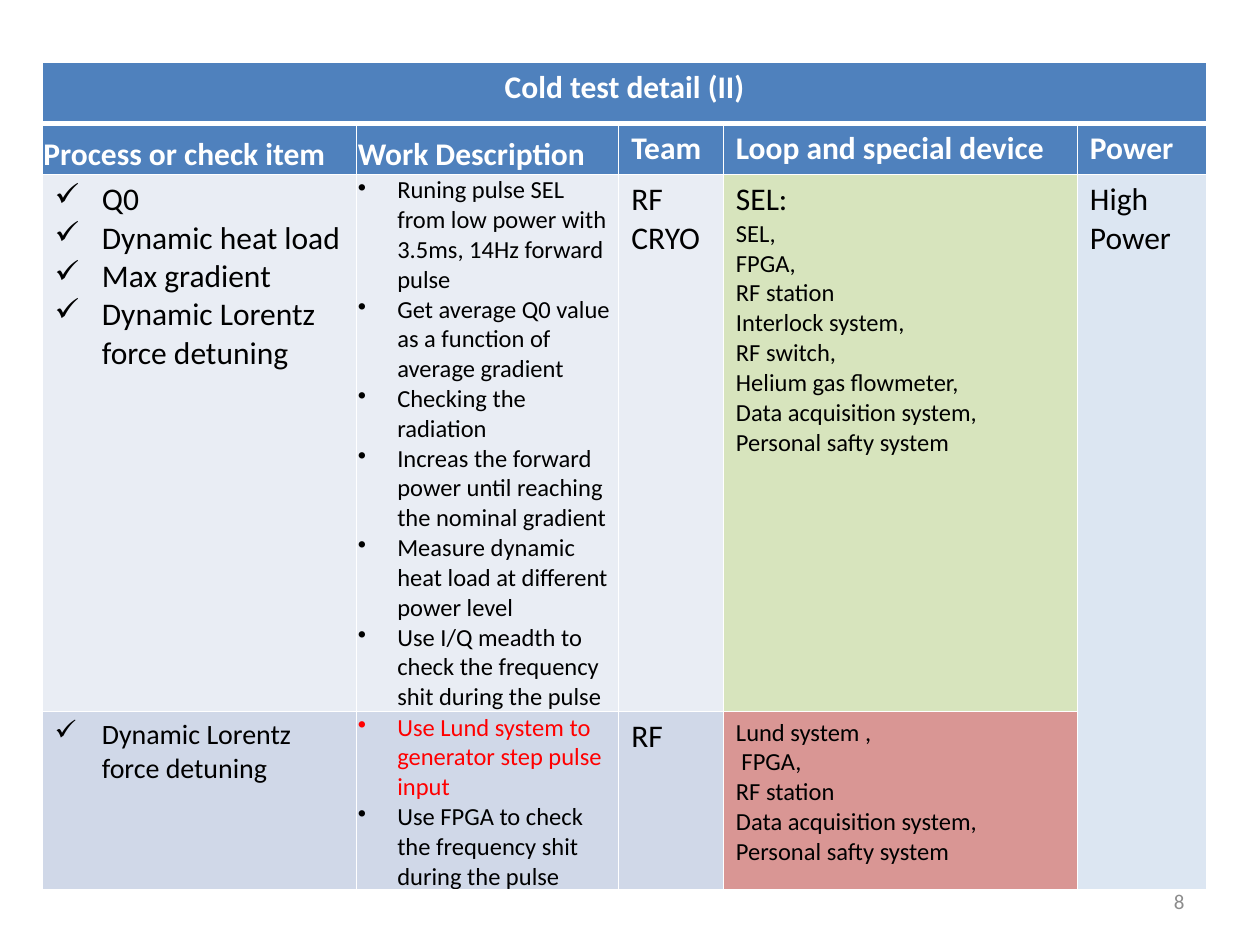
from dataclasses import dataclass

from lxml import etree
from pptx import Presentation
from pptx.dml.color import RGBColor
from pptx.enum import text
from pptx.oxml import ns
from pptx.util import Pt


@dataclass(frozen=True)
class Theme:
    font: str = "Calibri"
    large: int = 18
    medium: int = 16
    small: int = 14
    footer: int = 12
    white: str = "FFFFFF"
    black: str = "000000"
    alert: str = "FF0000"
    muted: str = "8C8C8C"
    header: str = "4F81BD"
    first_band: str = "E9EDF4"
    second_band: str = "D0D8E8"
    green: str = "D7E4BD"
    rose: str = "D99694"
    power: str = "DCE6F2"
    thin_rule: float = 1
    thick_rule: float = 3


THEME = Theme()
CHECK, DOT = ("✓", 27), ("•", 22.5)
COLUMNS = (179.8, 149.8, 59.8, 202.3, 74.2)
ROWS = (35.3, 29, 307, 102)
HEADINGS = ("Process or check item", "Work Description", "Team",
            "Loop and special device", "Power")
MEASUREMENTS = ("Q0", "Dynamic heat load", "Max gradient",
                "Dynamic Lorentz force detuning")
PULSE_STEPS = (
    "Runing pulse SEL from low power with 3.5ms, 14Hz forward pulse",
    "Get average Q0 value as a function of average gradient",
    "Checking the radiation",
    "Increas the forward power until reaching the nominal gradient",
    "Measure dynamic heat load at different power level",
    "Use I/Q meadth to check the frequency shit during the pulse",
)
SEL_DEVICES = ("SEL,", "FPGA,", "RF station", "Interlock system,", "RF switch,",
               "Helium gas flowmeter,", "Data acquisition system,",
               "Personal safty system")
LUND_STEP = "Use Lund system to generator step pulse input"
FPGA_STEP = "Use FPGA to check the frequency shit during the pulse"
LUND_DEVICES = ("Lund system ,", " FPGA,", "RF station",
                "Data acquisition system,", "Personal safty system")


def rgb(color):
    return RGBColor.from_string(color)


def lines(words, size=THEME.large, color=THEME.black, bold=False, bullet=None):
    return [(word, size, color, bold, bullet) for word in words]


def add_bullet(paragraph, bullet):
    mark, indent = bullet
    properties = paragraph._p.get_or_add_pPr()
    properties.set("marL", str(Pt(indent)))
    properties.set("indent", str(-Pt(indent)))
    etree.SubElement(properties, ns.qn("a:buChar")).set("char", mark)


def write(frame, content, align=text.PP_ALIGN.LEFT):
    for index, (word, size, color, bold, bullet) in enumerate(content):
        paragraph = frame.add_paragraph() if index else frame.paragraphs[0]
        paragraph.alignment = align
        if bullet:
            add_bullet(paragraph, bullet)
        run = paragraph.add_run()
        run.text = word
        run.font.name = THEME.font
        run.font.size = Pt(size)
        run.font.bold = bold
        run.font.color.rgb = rgb(color)


def style_cell(cell, fill, bottom_rule, top_rule):
    cell.fill.solid()
    cell.fill.fore_color.rgb = rgb(fill)
    properties = cell._tc.get_or_add_tcPr()
    rules = (("L", THEME.thin_rule), ("R", THEME.thin_rule),
             ("T", top_rule), ("B", bottom_rule))
    for position, (side, width) in enumerate(rules):
        border = etree.Element(ns.qn(f"a:ln{side}"), w=str(Pt(width)))
        paint = etree.SubElement(border, ns.qn("a:solidFill"))
        etree.SubElement(paint, ns.qn("a:srgbClr")).set("val", THEME.white)
        properties.insert(position, border)


def tighten(cell):
    cell.vertical_anchor = text.MSO_ANCHOR.BOTTOM
    cell.margin_left = cell.margin_right = cell.margin_top = Pt(0.75)
    cell.margin_bottom = Pt(0)


def add_test_table(slide, left, top, width, height):
    table = slide.shapes.add_table(len(ROWS), len(COLUMNS), Pt(left), Pt(top),
                                   Pt(width), Pt(height)).table
    table.first_row = table.horz_banding = False
    for column, share in zip(table.columns, COLUMNS):
        column.width = Pt(width * share / sum(COLUMNS))
    for row, share in zip(table.rows, ROWS):
        row.height = Pt(height * share / sum(ROWS))

    fills = (
        [THEME.header] * 5,
        [THEME.header] * 5,
        [THEME.first_band] * 3 + [THEME.green, THEME.power],
        [THEME.second_band] * 3 + [THEME.rose, THEME.power],
    )
    for row, row_fills in enumerate(fills):
        for column, fill in enumerate(row_fills):
            style_cell(table.cell(row, column), fill,
                       THEME.thick_rule if row == 0 else THEME.thin_rule,
                       THEME.thick_rule if row == 1 else THEME.thin_rule)
    table.cell(0, 0).merge(table.cell(0, 4))
    table.cell(2, 4).merge(table.cell(3, 4))
    for position in ((1, 0), (1, 1), (2, 1), (3, 1)):
        tighten(table.cell(*position))

    title = lines(["Cold test detail (II)"], color=THEME.white, bold=True)
    write(table.cell(0, 0).text_frame, title, text.PP_ALIGN.CENTER)
    body = (
        [lines([heading], color=THEME.white, bold=True) for heading in HEADINGS],
        [
            lines(MEASUREMENTS, bullet=CHECK),
            lines(PULSE_STEPS, THEME.small, bullet=DOT),
            lines(["RF", "CRYO"]),
            lines(["SEL:"]) + lines(SEL_DEVICES, THEME.small),
            lines(["High", "Power"]),
        ],
        [
            lines(MEASUREMENTS[-1:], THEME.medium, bullet=CHECK),
            lines([LUND_STEP], THEME.small, THEME.alert, bullet=DOT)
            + lines([FPGA_STEP], THEME.small, bullet=DOT),
            lines(["RF"]),
            lines(LUND_DEVICES, THEME.small),
        ],
    )
    for row, contents in enumerate(body, start=1):
        for column, content in enumerate(contents):
            write(table.cell(row, column).text_frame, content)


def add_page_number(slide, left, top, width, height):
    frame = slide.shapes.add_textbox(Pt(left), Pt(top), Pt(width),
                                     Pt(height)).text_frame
    frame.word_wrap = True
    frame.vertical_anchor = text.MSO_ANCHOR.MIDDLE
    write(frame, lines(["8"], THEME.footer, THEME.muted), text.PP_ALIGN.RIGHT)


def main():
    deck = Presentation()
    deck.slide_width, deck.slide_height = Pt(720), Pt(540)
    slide = deck.slides.add_slide(deck.slide_layouts[6])
    add_page_number(slide, 516, 500.5, 168, 28.75)
    add_test_table(slide, 24, 35.3, sum(COLUMNS), sum(ROWS))
    deck.save("out.pptx")


if __name__ == "__main__":
    main()
